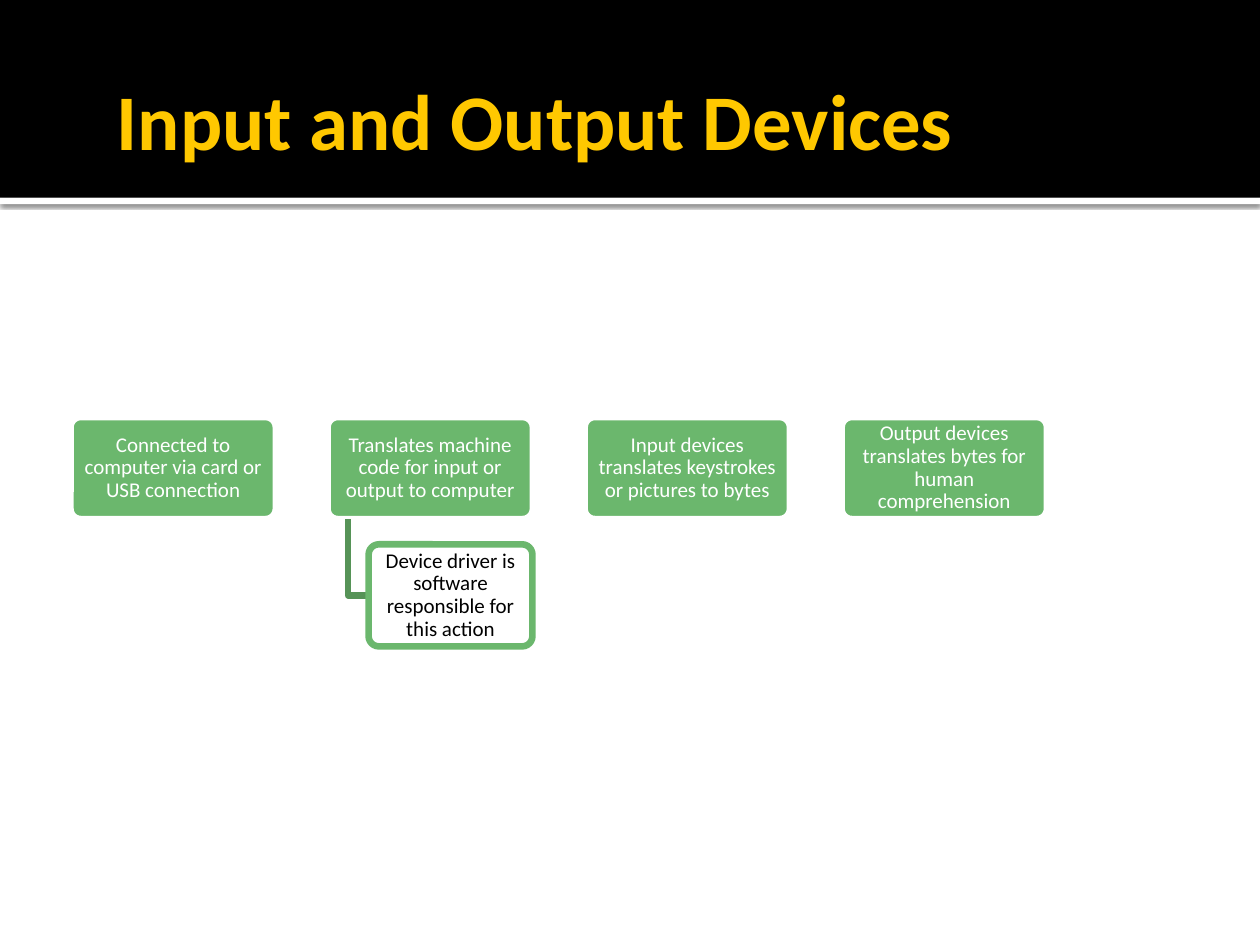
import pptx
import pptx.util
import pptx.dml.color
import pptx.enum.shapes
import pptx.enum.text
import lxml.etree
from pptx.util import Inches

TITLE = "Input and Output Devices"
STEPS = [
    "Connected to computer via card or USB connection",
    "Translates machine code for input or output to computer",
    "Input devices translates keystrokes or pictures to bytes",
    "Output devices translates bytes for human comprehension",
]
DETAIL = "Device driver is software responsible for this action"
DETAIL_STEP = 1

GREEN, DARK_GREEN, GOLD = "6BB76D", "569357", "FFC800"
WHITE, BLACK = "FFFFFF", "000000"
LEFT, TOP, PITCH = 0.56, 3.31, 2.04
STEP_W, DETAIL_W, BOX_H, GAP = 1.63, 1.3, 0.81, 0.2
LINE_W = 3.78
SHAPE = pptx.enum.shapes.MSO_SHAPE
ALIGN = pptx.enum.text.PP_ALIGN
A = "http://schemas.openxmlformats.org/drawingml/2006/main"


def rgb(color):
    return pptx.dml.color.RGBColor.from_string(color)


def set_line(sp, color):
    sp.line.color.rgb = rgb(color)
    sp.line.width = pptx.util.Pt(LINE_W)


def add_block(s, kind, x, y, w, h, fill, line=None):
    sp = s.shapes.add_shape(kind, Inches(x), Inches(y), Inches(w), Inches(h))
    sp.shadow.inherit = False
    sp.fill.solid()
    sp.fill.fore_color.rgb = rgb(fill)
    if line:
        set_line(sp, line)
    else:
        sp.line.fill.background()
    return sp


def set_text(sp, text, size=12, color=WHITE, bold=False, align=ALIGN.CENTER,
             spacing=0.9, insets=(0.05, 0.04, 0.05, 0.04)):
    tf = sp.text_frame
    tf.word_wrap = True
    tf.vertical_anchor = pptx.enum.text.MSO_ANCHOR.MIDDLE
    tf.margin_left, tf.margin_top, tf.margin_right, tf.margin_bottom = map(Inches, insets)
    p = tf.paragraphs[0]
    p.alignment = align
    p.line_spacing = spacing
    r = p.add_run()
    r.text = text
    r.font.name = "Calibri"
    r.font.size = pptx.util.Pt(size)
    r.font.bold = bold
    r.font.color.rgb = rgb(color)


def add_box(s, x, y, w, text, fill, line, color):
    sp = add_block(s, SHAPE.ROUNDED_RECTANGLE, x, y, w, BOX_H, fill, line)
    sp.adjustments[0] = 0.1
    set_text(sp, text, color=color)
    return sp


def add_shadow(sp):
    effects = sp._element.spPr.find(f"{{{A}}}effectLst")
    effects.append(lxml.etree.fromstring(
        f'<a:outerShdw xmlns:a="{A}" blurRad="31750" dist="10160" dir="5400000" '
        'algn="tl" rotWithShape="0"><a:srgbClr val="000000">'
        '<a:alpha val="60000"/></a:srgbClr></a:outerShdw>'))


def set_alpha(sp, percent):
    color = sp._element.spPr.find(f"{{{A}}}solidFill/{{{A}}}srgbClr")
    lxml.etree.SubElement(color, f"{{{A}}}alpha", val=str(percent * 1000))


def add_elbow(s, x, y, corner_y, end_x):
    fb = s.shapes.build_freeform(Inches(x), Inches(y))
    fb.add_line_segments([(Inches(x), Inches(corner_y)),
                          (Inches(end_x), Inches(corner_y))], close=False)
    sp = fb.convert_to_shape()
    sp.shadow.inherit = False
    sp.fill.background()
    set_line(sp, DARK_GREEN)


def add_detail(s, step_x):
    bottom = TOP + BOX_H
    x, y = step_x + 2 * STEP_W / 10, bottom + GAP
    add_elbow(s, step_x + STEP_W / 10, bottom, y + BOX_H / 2, x)
    sp = add_box(s, x, y, DETAIL_W, DETAIL, WHITE, GREEN, BLACK)
    set_alpha(sp, 90)


def main():
    prs = pptx.Presentation()
    prs.slide_width, prs.slide_height = Inches(10), Inches(7.5)
    s = prs.slides.add_slide(prs.slide_layouts[6])

    add_shadow(add_block(s, SHAPE.RECTANGLE, 0, 1.57, 10, 0.05, WHITE))
    add_block(s, SHAPE.RECTANGLE, 0, 0, 10, 1.57, BLACK)
    title = s.shapes.add_textbox(Inches(0.83), Inches(0.5), Inches(7.89), Inches(0.89))
    set_text(title, TITLE, size=45, color=GOLD, bold=True, align=ALIGN.LEFT,
             spacing=1.0, insets=(0.1, 0.05, 0.05, 0.05))

    for i, text in enumerate(STEPS):
        x = LEFT + i * PITCH
        add_box(s, x, TOP, STEP_W, text, GREEN, WHITE, WHITE)
        if i == DETAIL_STEP:
            add_detail(s, x)

    prs.save("out.pptx")


if __name__ == "__main__":
    main()
